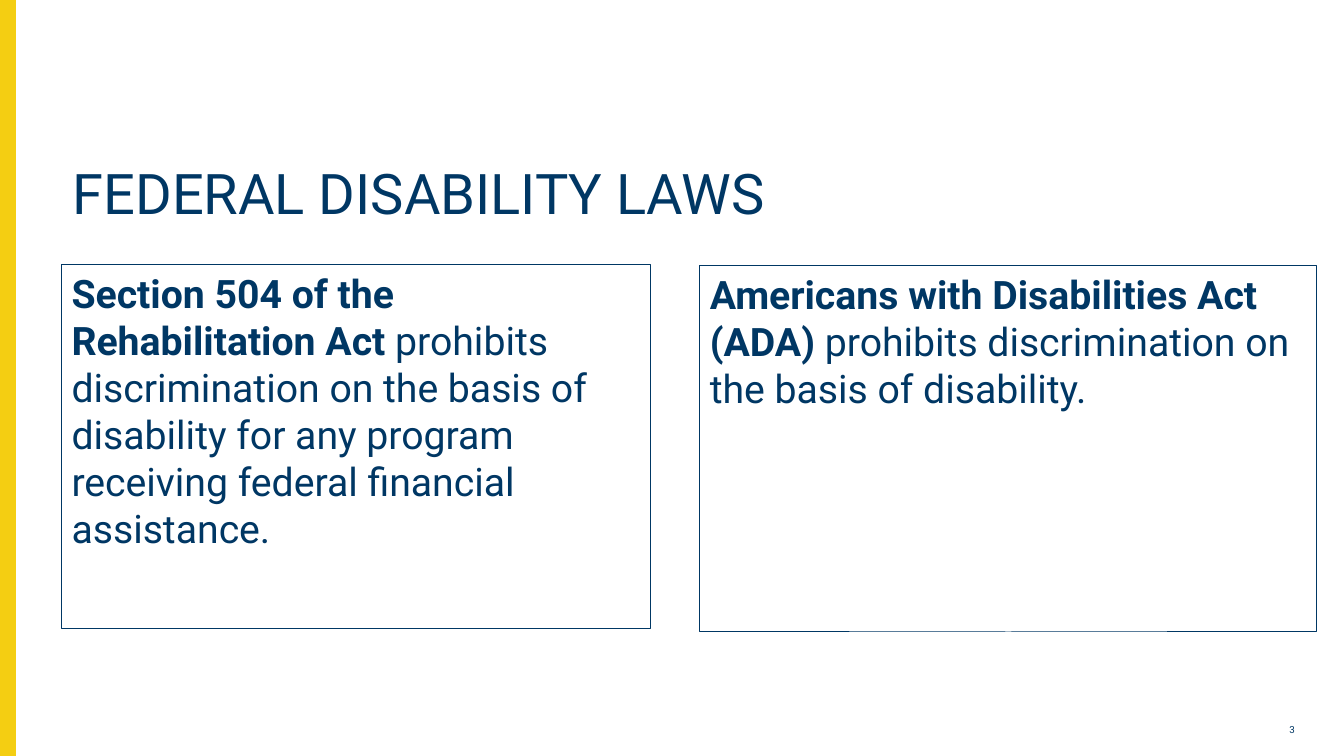
from lxml import etree
from pptx import Presentation
from pptx.dml.color import RGBColor
from pptx.enum.shapes import MSO_SHAPE
from pptx.enum.text import MSO_ANCHOR, MSO_AUTO_SIZE, PP_ALIGN
from pptx.oxml.ns import qn
from pptx.util import Inches, Pt

NAVY = "003764"
YELLOW = "F4CE12"


def color(hex_code):
    return RGBColor.from_string(hex_code)


def write(holder, text, box, size, lead="", align=PP_ALIGN.LEFT,
          anchor=MSO_ANCHOR.TOP, spacing=1.0, after=0):
    holder.left, holder.top, holder.width, holder.height = map(Inches, box)
    frame = holder.text_frame
    frame.word_wrap = True
    frame.auto_size = MSO_AUTO_SIZE.NONE
    frame.vertical_anchor = anchor
    paragraph = frame.paragraphs[0]
    paragraph.alignment = align
    paragraph.line_spacing = spacing
    paragraph.space_before = Pt(0)
    paragraph.space_after = Pt(after)
    properties = paragraph._p.get_or_add_pPr()
    properties.set("marL", "0")
    properties.set("indent", "0")
    etree.SubElement(properties, qn("a:buNone"))
    for words, bold in ((lead, True), (text, False)):
        if words:
            run = paragraph.add_run()
            run.text = words
            run.font.name = "Roboto"
            run.font.size = Pt(size)
            run.font.bold = bold
            run.font.color.rgb = color(NAVY)


deck = Presentation()
deck.slide_width = Inches(13.33)
deck.slide_height = Inches(7.5)
slide = deck.slides.add_slide(deck.slide_layouts[3])
heading, section_504, ada = slide.placeholders

accent = slide.shapes.add_shape(
    MSO_SHAPE.RECTANGLE, 0, 0, Inches(0.15), deck.slide_height)
accent.shadow.inherit = False
accent.fill.solid()
accent.fill.fore_color.rgb = color(YELLOW)
accent.line.color.rgb = color(YELLOW)
accent.line.width = Pt(1)

write(heading, "FEDERAL DISABILITY LAWS", (0.62, 1.6, 12.44, 0.79), 40,
      spacing=0.9)

laws = [
    (section_504, (0.61, 2.62, 5.84, 3.62),
     "Section 504 of the Rehabilitation Act",
     " prohibits discrimination on the basis of disability for any program "
     "receiving federal financial assistance."),
    (ada, (6.94, 2.63, 6.12, 3.64),
     "Americans with Disabilities Act (ADA)",
     " prohibits discrimination on the basis of disability."),
]
for law, box, name, rule in laws:
    write(law, rule, box, 28, lead=name)
    law.line.color.rgb = color(NAVY)
    law.line.width = Pt(0.75)

page_number = slide.shapes.add_textbox(0, 0, 0, 0)
write(page_number, "3", (12.27, 7.14, 0.67, 0.21), 7, align=PP_ALIGN.RIGHT,
      anchor=MSO_ANCHOR.MIDDLE, spacing=0.9, after=6)

deck.save("out.pptx")
